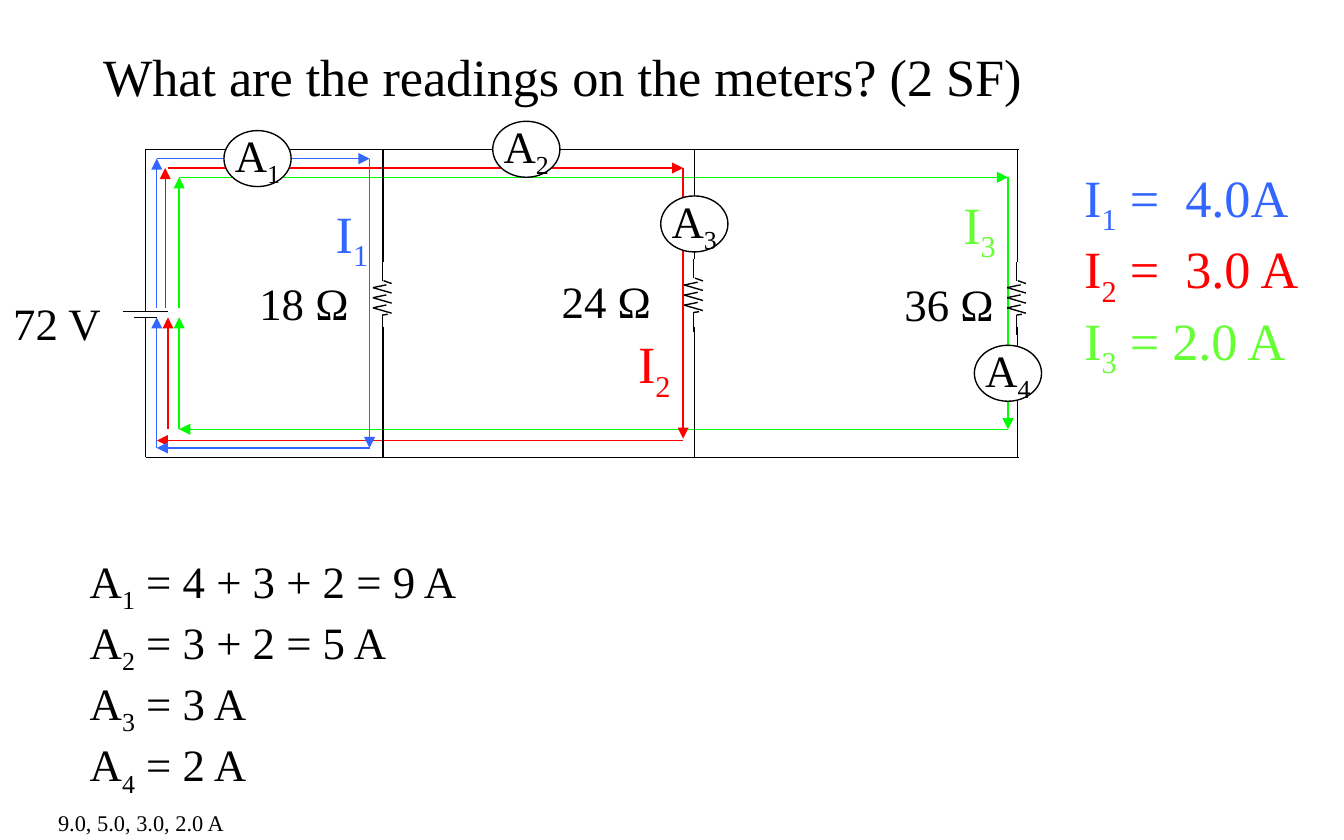
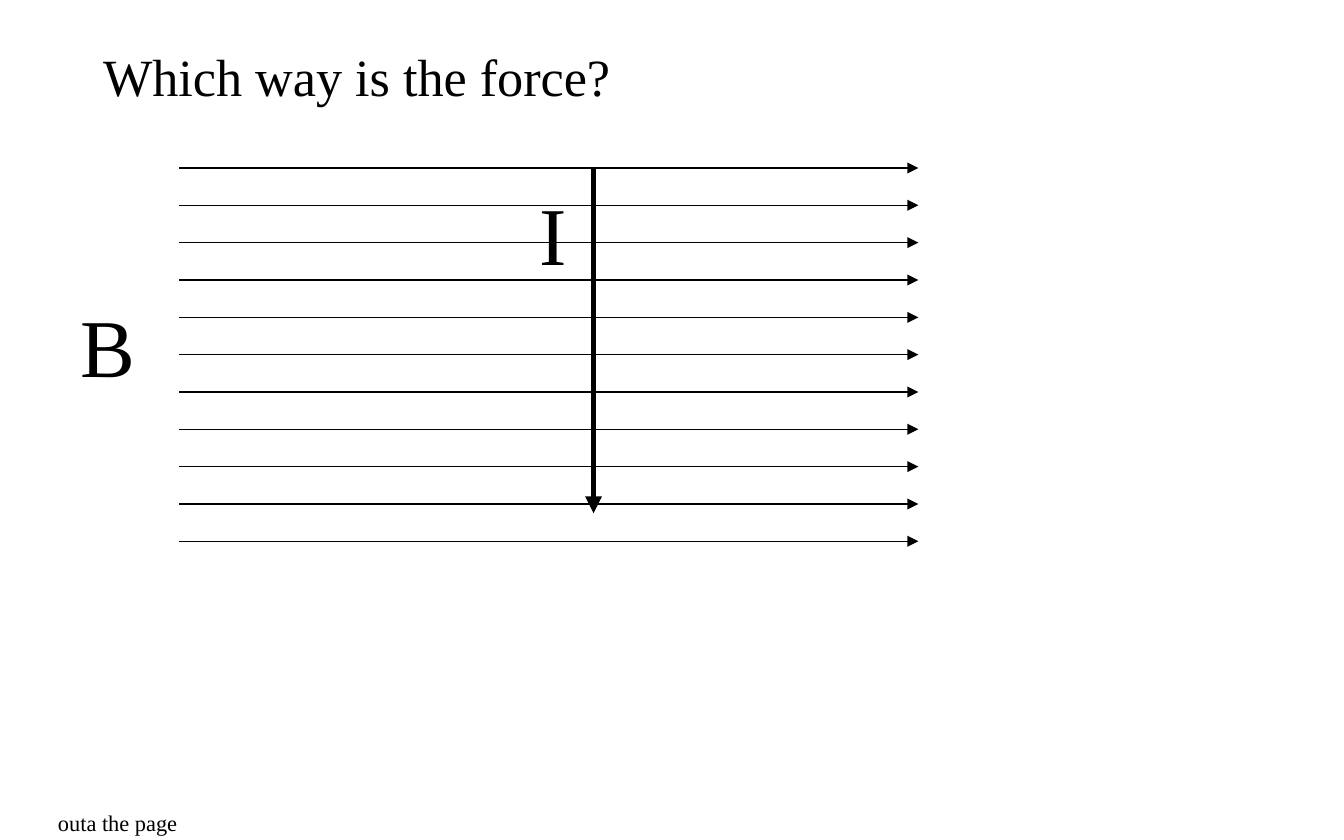
from pptx import Presentation
from pptx.dml.color import RGBColor
from pptx.enum.shapes import MSO_CONNECTOR as Link, MSO_SHAPE as Shape
from pptx.enum.text import MSO_ANCHOR as Anchor, MSO_AUTO_SIZE as Fit, PP_ALIGN as Align
from pptx.oxml.ns import qn
from pptx.util import Pt
from lxml.etree import SubElement

BLACK = RGBColor(0, 0, 0)
WHITE = RGBColor(255, 255, 255)
RED = RGBColor(255, 0, 0)
GREEN = RGBColor(0, 255, 0)
LIME = RGBColor(0x66, 0xFF, 0x33)
BLUE = RGBColor(0x33, 0x66, 0xFF)


def apply(item, values):
    for name, value in values.items():
        setattr(item, name, value)


class Deck:
    font = {"name": "Times New Roman", "bold": False}
    frame = {"word_wrap": False, "auto_size": Fit.SHAPE_TO_FIT_TEXT,
             "vertical_anchor": Anchor.TOP}
    badge = {"word_wrap": False, "auto_size": Fit.NONE,
             "vertical_anchor": Anchor.MIDDLE}

    def __init__(self):
        self.deck = Presentation()
        apply(self.deck, {"slide_width": Pt(720), "slide_height": Pt(450)})

    def page(self, title, width, answer, span):
        self.slide = self.deck.slides.add_slide(self.deck.slide_layouts[5])
        head = self.slide.shapes.title
        apply(head, {"left": Pt(48), "top": Pt(20), "width": Pt(width), "height": Pt(41)})
        self.fill(head.text_frame, [(title, BLACK)], 28, self.frame)
        self.text(24, 430, span, 21.6, [(answer, BLACK)], 12)

    def fill(self, frame, lines, size, form, align=Align.LEFT):
        apply(frame, form)
        for row, (text, color) in enumerate(lines):
            para = frame.add_paragraph() if row else frame.paragraphs[0]
            para.alignment = align
            start, *parts = text.split("_")
            self.run(para, start, size, color)
            for part in parts:
                self.run(para, part[0], size, color, True)
                if part[1:]:
                    self.run(para, part[1:], size, color)

    def run(self, para, text, size, color, low=False):
        run = para.add_run()
        run.text = text
        apply(run.font, {**self.font, "size": Pt(size)})
        run.font.color.rgb = color
        if low:
            run._r.get_or_add_rPr().set("baseline", "-25000")

    def text(self, x, y, width, height, lines, size=24):
        box = self.slide.shapes.add_textbox(Pt(x), Pt(y), Pt(width), Pt(height))
        self.fill(box.text_frame, lines, size, self.frame)

    def line(self, start, end, color=BLACK, width=0.75, arrow=False):
        ends = [Pt(n) for n in (*start, *end)]
        line = self.slide.shapes.add_connector(Link.STRAIGHT, *ends)
        line.line.color.rgb = color
        line.line.width = Pt(width)
        if arrow:
            SubElement(line.line._get_or_add_ln(), qn("a:tailEnd"), type="triangle")
        SubElement(line._element.spPr, qn("a:effectLst"))

    def chain(self, points, color=BLACK, arrow=False):
        for start, end in zip(points, points[1:]):
            self.line(start, end, color, arrow=arrow)

    def meter(self, x, y, name):
        disc = self.slide.shapes.add_shape(Shape.OVAL, Pt(x), Pt(y), Pt(36), Pt(30))
        disc.shadow.inherit = False
        disc.fill.solid()
        disc.fill.fore_color.rgb = WHITE
        disc.line.color.rgb = BLACK
        disc.line.width = Pt(0.75)
        self.fill(disc.text_frame, [(name, BLACK)], 24, self.badge, Align.CENTER)

    def coil(self, x, y):
        turns = [[(2.2, 12.2 + 5.4 * n), (-5, 13.7 + 5.4 * n), (5, 16.6 + 5.4 * n)]
                 for n in range(3)]
        ends = [[(0, 0), (0, 10)], [(0.7, 10), (5, 11.5)],
                [(2.9, 28), (0, 28.4)], [(0, 28.4), (0, 38.9)]]
        for part in turns + ends:
            self.chain([(x + dx, y + dy) for dx, dy in part])

    def battery(self, x, top, base):
        self.line((x - 12, 167), (x + 12, 167))
        self.line((x - 6, 170), (x + 6, 170))
        self.line((x, 167), (x, top))
        self.line((x, base), (x, 170))


def circuit(deck):
    deck.page("What are the readings on the meters? (2 SF)", 512,
              "9.0, 5.0, 3.0, 2.0 A", 104.4)
    loops = [
        (GREEN, [[(96, 165), (96, 95), (540, 95), (540, 230), (96, 230), (96, 170)]]),
        (RED, [[(88.5, 165), (88.5, 90)], [(90, 90), (366, 90), (366, 235)],
               [(366, 236), (84, 236)], [(90, 230), (90, 170)]]),
        (BLUE, [[(84, 165), (84, 85), (198, 85), (198, 240), (84, 240), (84, 170)]]),
    ]
    for color, chains in loops:
        for points in chains:
            deck.chain(points, color, True)
    for x, y, name, color in [(509, 99.4, "I_3", LIME), (334.8, 174.2, "I_2", RED),
                              (172.8, 104.4, "I_1", BLUE)]:
        deck.text(x, y, 33, 41, [(name, color)], 28)
    deck.text(573.8, 85, 132.5, 108.7,
              [("I_1 =  4.0A", BLUE), ("I_2 =  3.0 A", RED), ("I_3 = 2.0 A", LIME)], 28)
    sums = ["A_1 = 4 + 3 + 2 = 9 A", "A_2 = 3 + 2 = 5 A", "A_3 = 3 A", "A_4 = 2 A"]
    deck.text(41, 293, 214.6, 123.8, [(row, BLACK) for row in sums])

    top, base = 80, 245
    for y in (top, base):
        deck.line((78, y), (546, y))
    deck.battery(78, top, base)
    for x, y in [(205.2, 140.4), (372, 139), (545, 140.4)]:
        deck.coil(x - 0.4, y)
        deck.line((x, y), (x, top))
        deck.line((x, 175), (x, base))
    for x, y, width, label in [(0, 154.8, 62, "72 V"), (131.8, 144, 63.4, "18 Ω"),
                               (293.8, 143.3, 63.4, "24 Ω"), (477.4, 144.7, 63.4, "36 Ω")]:
        deck.text(x, y, width, 36.5, [(label, BLACK)])
    for x, y, name in [(264, 65, "A_2"), (120, 70, "A_1"),
                       (354, 105, "A_3"), (522, 185, "A_4")]:
        deck.meter(x, y, name)


def field(deck):
    deck.page("Which way is the force?", 289.4, "outa the page", 79.2)
    deck.line((318, 90), (318, 275), width=3, arrow=True)
    for row in range(11):
        y = 90 + 20 * row
        deck.line((96, y), (492, y), arrow=True)
    deck.text(282, 95, 29.5, 60.5, [("I", BLACK)], 44)
    deck.text(36, 154.8, 44, 60.5, [("B", BLACK)], 44)


def main():
    deck = Deck()
    circuit(deck)
    field(deck)
    deck.deck.save("out.pptx")


if __name__ == "__main__":
    main()
